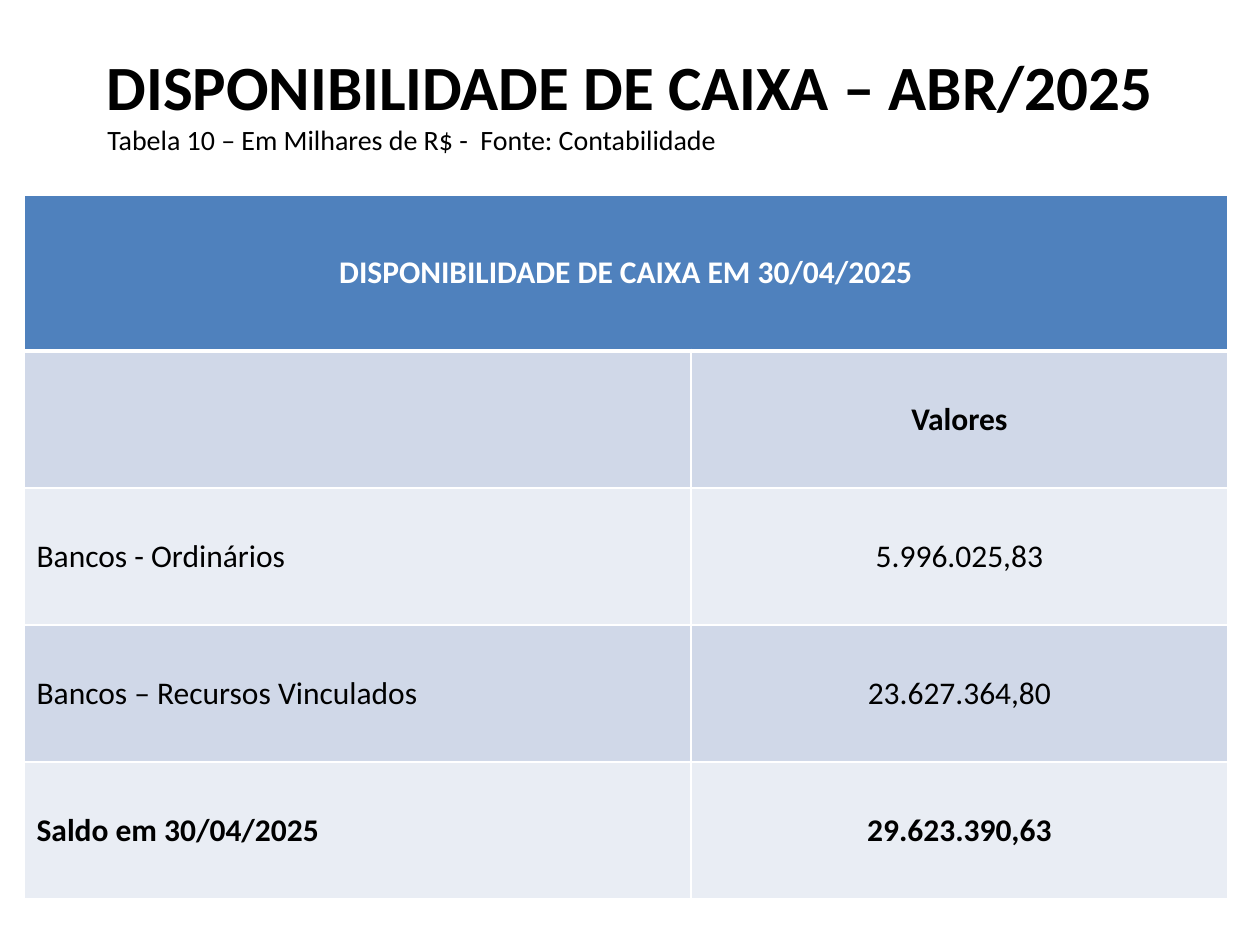
from dataclasses import dataclass

from lxml import etree
from pptx import Presentation
from pptx.dml.color import RGBColor
from pptx.enum.text import MSO_ANCHOR, PP_ALIGN
from pptx.oxml.ns import qn
from pptx.util import Emu, Pt

PX_PER_INCH = 126
EMU_PER_INCH = 914400
FONT = "Calibri"

BLACK = RGBColor(0x00, 0x00, 0x00)
WHITE = RGBColor(0xFF, 0xFF, 0xFF)
HEADER_BLUE = RGBColor(0x4F, 0x81, 0xBD)
BAND_DARK = RGBColor(0xD0, 0xD8, 0xE8)
BAND_LIGHT = RGBColor(0xE9, 0xED, 0xF4)

LEFT, CENTER = PP_ALIGN.LEFT, PP_ALIGN.CENTER
TOP, MIDDLE = MSO_ANCHOR.TOP, MSO_ANCHOR.MIDDLE

COLUMN_WIDTHS = (667, 537)
HEADER_HEIGHT = 156
ROW_HEIGHT = 137


@dataclass(frozen=True)
class Heading:
    text: str
    left: int
    top: int
    width: int
    height: int
    size: int
    bold: bool
    align: PP_ALIGN
    anchor: MSO_ANCHOR


@dataclass(frozen=True)
class BalanceRow:
    label: str
    value: str
    bold: bool = False


HEADINGS = (
    Heading("DISPONIBILIDADE DE CAIXA – ABR/2025", 63, 16, 1134, 139, 36, True, CENTER, MIDDLE),
    Heading("Tabela 10 – Em Milhares de R$ -  Fonte: Contabilidade",
            95, 116, 1134, 81, 16, False, LEFT, TOP),
)
TABLE_TITLE = "DISPONIBILIDADE DE CAIXA EM 30/04/2025"
BALANCE_ROWS = (
    BalanceRow("", "Valores", bold=True),
    BalanceRow("Bancos - Ordinários", "5.996.025,83"),
    BalanceRow("Bancos – Recursos Vinculados", "23.627.364,80"),
    BalanceRow("Saldo em 30/04/2025", "29.623.390,63", bold=True),
)


def px(length: int) -> Emu:
    return Emu(round(length * EMU_PER_INCH / PX_PER_INCH))


def write_text(text_frame, text: str, size: int, bold: bool, color: RGBColor,
               align: PP_ALIGN) -> None:
    paragraph = text_frame.paragraphs[0]
    paragraph.text = text
    paragraph.alignment = align
    font = paragraph.font
    font.name, font.size, font.bold = FONT, Pt(size), bold
    font.color.rgb = color


def add_heading(slide, heading: Heading) -> None:
    shape = slide.shapes.add_textbox(
        px(heading.left), px(heading.top), px(heading.width), px(heading.height))
    shape.text_frame.word_wrap = True
    shape.text_frame.vertical_anchor = heading.anchor
    write_text(shape.text_frame, heading.text, heading.size, heading.bold, BLACK, heading.align)


def set_borders(cell, top: int = 1, bottom: int = 1) -> None:
    """Draw white cell borders; widths are in points."""
    properties = cell._tc.get_or_add_tcPr()
    for tag, width in (("a:lnL", 1), ("a:lnR", 1), ("a:lnT", top), ("a:lnB", bottom)):
        line = etree.SubElement(properties, qn(tag), w=str(Pt(width)))
        fill = etree.SubElement(line, qn("a:solidFill"))
        etree.SubElement(fill, qn("a:srgbClr"), val=str(WHITE))


def fill_cell(cell, text: str, bold: bool, color: RGBColor, background: RGBColor,
              align: PP_ALIGN) -> None:
    cell.fill.solid()
    cell.fill.fore_color.rgb = background
    cell.vertical_anchor = MIDDLE
    write_text(cell.text_frame, text, 18, bold, color, align)


def add_balance_table(slide, left: int, top: int) -> None:
    heights = (HEADER_HEIGHT,) + (ROW_HEIGHT,) * len(BALANCE_ROWS)
    table = slide.shapes.add_table(
        len(heights), len(COLUMN_WIDTHS), px(left), px(top),
        px(sum(COLUMN_WIDTHS)), px(sum(heights))).table
    for column, width in zip(table.columns, COLUMN_WIDTHS):
        column.width = px(width)
    for row, height in zip(table.rows, heights):
        row.height = px(height)

    header = table.cell(0, 0)
    header.merge(table.cell(0, 1))
    for cell in table.rows[0].cells:
        set_borders(cell, bottom=3)
    fill_cell(header, TABLE_TITLE, True, WHITE, HEADER_BLUE, CENTER)

    for index, row in enumerate(BALANCE_ROWS, start=1):
        background = BAND_DARK if index % 2 else BAND_LIGHT
        for column, (text, align) in enumerate(((row.label, LEFT), (row.value, CENTER))):
            cell = table.cell(index, column)
            set_borders(cell, top=3 if index == 1 else 1)
            fill_cell(cell, text, row.bold, BLACK, background, align)


def main() -> None:
    presentation = Presentation()
    presentation.slide_width = px(1260)
    presentation.slide_height = px(945)
    slide = presentation.slides.add_slide(presentation.slide_layouts[6])
    for heading in HEADINGS:
        add_heading(slide, heading)
    add_balance_table(slide, 24, 195)
    presentation.save("out.pptx")


if __name__ == "__main__":
    main()
